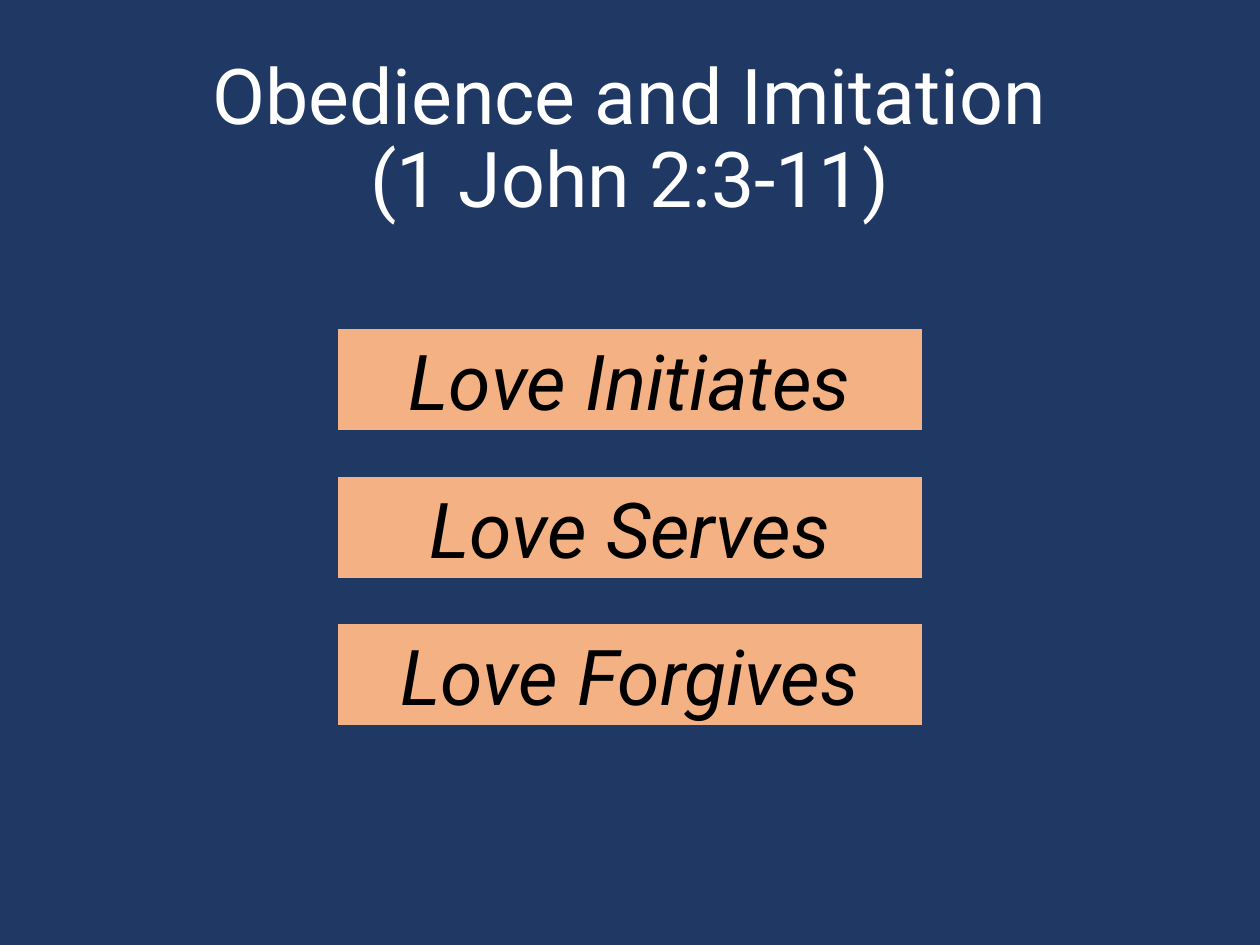
from pptx import Presentation
from pptx.dml.color import RGBColor
from pptx.enum.shapes import MSO_SHAPE
from pptx.enum.text import MSO_ANCHOR, MSO_AUTO_SIZE, PP_ALIGN
from pptx.util import Cm, Pt

RECTANGLE = MSO_SHAPE.RECTANGLE
MIDDLE = MSO_ANCHOR.MIDDLE
CENTER = PP_ALIGN.CENTER
FIT_SHAPE = MSO_AUTO_SIZE.SHAPE_TO_FIT_TEXT
NO_FIT = MSO_AUTO_SIZE.NONE
TITLE_ONLY = 5

COLORS = {"navy": "203864", "peach": "F4B183", "white": "FFFFFF", "black": "000000"}
POINTS = ["Love Initiates", "Love Serves", "Love Forgives"]


def color(name):
    return RGBColor.from_string(COLORS[name])


def write_text(box, text, fill="black", italic=False, spacing=1.0, fit=NO_FIT):
    frame = box.text_frame
    frame.word_wrap = True
    frame.auto_size = fit
    frame.vertical_anchor = MIDDLE
    para = frame.paragraphs[0]
    para.text = text
    para.alignment = CENTER
    para.line_spacing = spacing
    for span in para.runs:
        span.font.name = "Roboto"
        span.font.size = Pt(44)
        span.font.italic = italic
        span.font.color.rgb = color(fill)


def add_title(page, text):
    title = page.shapes.title
    title.left, title.top = Cm(1.75), Cm(1.01)
    title.width, title.height = Cm(21.9), Cm(3.68)
    write_text(title, text, fill="white", spacing=0.9)


def add_point(page, text, top):
    box = page.shapes.add_shape(RECTANGLE, Cm(6.76), top, Cm(11.88), Cm(2.14))
    box.shadow.inherit = False
    box.fill.solid()
    box.fill.fore_color.rgb = color("peach")
    box.line.color.rgb = color("navy")
    box.line.width = Pt(3)
    write_text(box, text, italic=True, fit=FIT_SHAPE)


def main():
    deck = Presentation()
    deck.slide_width, deck.slide_height = Cm(25.4), Cm(19.05)
    page = deck.slides.add_slide(deck.slide_layouts[TITLE_ONLY])
    page.background.fill.solid()
    page.background.fill.fore_color.rgb = color("navy")

    add_title(page, "Obedience and Imitation\n(1 John 2:3-11)")
    for index, text in enumerate(POINTS):
        add_point(page, text, Cm(6.59 + 2.97 * index))

    deck.save("out.pptx")


if __name__ == "__main__":
    main()
